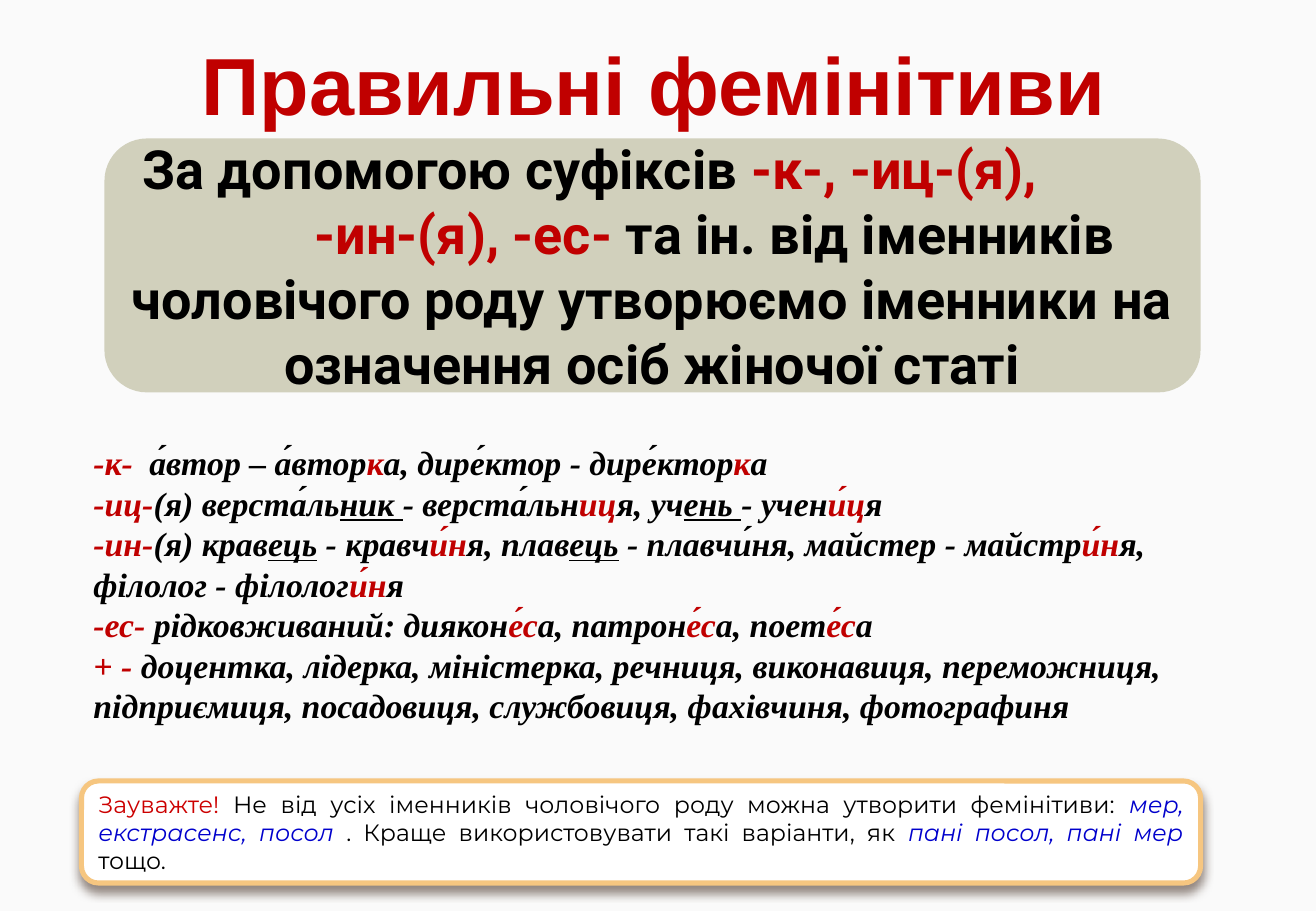
import pptx
import pptx.util
import pptx.dml.color
import pptx.enum.shapes
import pptx.enum.text
import pptx.oxml
import pptx.oxml.ns

RGBColor = pptx.dml.color.RGBColor
ALIGN = pptx.enum.text.PP_ALIGN
ANCHOR = pptx.enum.text.MSO_ANCHOR
PAPER = RGBColor(0xFA, 0xFA, 0xFA)
WHITE = RGBColor(0xFF, 0xFF, 0xFF)
BLACK = RGBColor(0x00, 0x00, 0x00)
CRIMSON = RGBColor(0xC0, 0x00, 0x00)
SCARLET = RGBColor(0xCC, 0x00, 0x00)
BLUE = RGBColor(0x00, 0x00, 0xCC)
OLIVE = RGBColor(0xD1, 0xD0, 0xBC)
APRICOT = RGBColor(0xF6, 0xC6, 0x80)
BROWN = RGBColor(0x4E, 0x3B, 0x30)

SLIDE_WIDTH = pptx.util.Inches(10.83)
SLIDE_HEIGHT = pptx.util.Inches(7.5)

HEADING_FONT = {"name": "Arial", "size": pptx.util.Pt(48), "bold": True}
RULE_FONT = {"name": "Roboto", "size": pptx.util.Pt(32), "bold": True}
EXAMPLE_FONT = {"name": "Times New Roman", "size": pptx.util.Pt(20), "bold": True, "italic": True}
NOTE_FONT = {"name": "Montserrat", "size": pptx.util.Pt(14)}

PLAIN = {"color": BLACK}
SUFFIX = {"color": CRIMSON}
DROPPED = {"color": BLACK, "underline": True}
WARNING = {"color": SCARLET}
SAMPLE = {"color": BLUE, "italic": True}

RULE = [
    (ALIGN.LEFT, 0.11, [("За допомогою суфіксів ", PLAIN), ("-к-, -иц-(я),", SUFFIX)]),
    (ALIGN.LEFT, 1.53, [("-ин-(я), -ес- ", SUFFIX), ("та ін. від іменників", PLAIN)]),
    (ALIGN.CENTER, 0, [("чоловічого роду утворюємо іменники на означення осіб жіночої статі", PLAIN)]),
]
EXAMPLES = [
    [("-к-\t", SUFFIX), ("а́втор – а́втор", PLAIN), ("к", SUFFIX),
     ("а, дире́ктор - дире́ктор", PLAIN), ("к", SUFFIX), ("а", PLAIN)],
    [("-иц-", SUFFIX), ("(я) верста́ль", PLAIN), ("ник ", DROPPED), ("- верста́льн", PLAIN),
     ("иц", SUFFIX), ("я, уч", PLAIN), ("ень ", DROPPED), ("- учен", PLAIN),
     ("и́ц", SUFFIX), ("я", PLAIN)],
    [("-ин-", SUFFIX), ("(я) крав", PLAIN), ("ець", DROPPED), (" - кравч", PLAIN),
     ("и́н", SUFFIX), ("я, плав", PLAIN), ("ець", DROPPED),
     (" - плавчи́ня, майстер - майстр", PLAIN), ("и́н", SUFFIX),
     ("я, філолог - філолог", PLAIN), ("и́н", SUFFIX), ("я", PLAIN)],
    [("-ес- ", SUFFIX), ("рідковживаний: диякон", PLAIN), ("е́с", SUFFIX), ("а, патрон", PLAIN),
     ("е́с", SUFFIX), ("а, поет", PLAIN), ("е́с", SUFFIX), ("а", PLAIN)],
    [("+ - ", SUFFIX),
     ("доцентка, лідерка, міністерка, речниця, виконавиця, переможниця, "
      "підприємиця, посадовиця, службовиця, фахівчиня, фотографиня", PLAIN)],
]
NOTE = [
    ("Зауважте! ", WARNING),
    ("Не від усіх іменників чоловічого роду можна утворити фемінітиви: ", PLAIN),
    ("мер, екстрасенс, посол ", SAMPLE),
    (". Краще використовувати такі варіанти, як ", PLAIN),
    ("пані посол, пані мер ", SAMPLE),
    ("тощо.", PLAIN),
]


def percent_box(left, top, width, height):
    """Turn percentages of the slide into left, top, width and height."""
    return tuple(int(share * side / 100) for share, side in
                 ((left, SLIDE_WIDTH), (top, SLIDE_HEIGHT), (width, SLIDE_WIDTH), (height, SLIDE_HEIGHT)))


def write_runs(paragraph, runs, base_font):
    """Add runs that combine a base font with their own style."""
    for text, style in runs:
        run = paragraph.add_run()
        run.text = text
        for key, value in {**base_font, **style}.items():
            if key == "color":
                run.font.color.rgb = value
            else:
                setattr(run.font, key, value)


def next_paragraph(frame, index):
    """Return the first paragraph of a frame or add another one."""
    return frame.add_paragraph() if index else frame.paragraphs[0]


def add_panel(slide, box, fill):
    """Draw a rounded panel with vertically centred text."""
    panel = slide.shapes.add_shape(pptx.enum.shapes.MSO_SHAPE.ROUNDED_RECTANGLE, *box)
    panel.shadow.inherit = False
    panel.fill.solid()
    panel.fill.fore_color.rgb = fill
    panel.line.fill.background()
    panel.text_frame.word_wrap = True
    panel.text_frame.vertical_anchor = ANCHOR.MIDDLE
    return panel


def add_heading(slide, box):
    """Move the title into its box and write it."""
    heading = slide.shapes.title
    heading.left, heading.top, heading.width, heading.height = box
    frame = heading.text_frame
    for key, value in {"word_wrap": True, "vertical_anchor": ANCHOR.TOP,
                       "auto_size": pptx.enum.text.MSO_AUTO_SIZE.NONE}.items():
        setattr(frame, key, value)
    frame.paragraphs[0].alignment = ALIGN.LEFT
    write_runs(frame.paragraphs[0], [("Правильні фемінітиви", SUFFIX)], HEADING_FONT)


def add_rule(slide, box):
    """Write the rule on an olive panel."""
    frame = add_panel(slide, box, OLIVE).text_frame
    for index, (alignment, indent, runs) in enumerate(RULE):
        paragraph = next_paragraph(frame, index)
        paragraph.alignment = alignment
        paragraph._p.get_or_add_pPr().set("marL", str(pptx.util.Inches(indent)))
        write_runs(paragraph, runs, RULE_FONT)


def add_examples(slide, box):
    """List the examples for each suffix."""
    frame = slide.shapes.add_textbox(*box).text_frame
    frame.word_wrap = True
    for index, runs in enumerate(EXAMPLES):
        paragraph = next_paragraph(frame, index)
        if "\t" in runs[0][0]:
            paragraph._p.get_or_add_pPr().append(pptx.oxml.parse_xml(
                f'<a:tabLst {pptx.oxml.ns.nsdecls("a")}>'
                f'<a:tab pos="{pptx.util.Inches(0.46)}" algn="l"/></a:tabLst>'))
        write_runs(paragraph, runs, EXAMPLE_FONT)


def add_note(slide, box):
    """Write the warning in a framed panel with a soft shadow."""
    panel = add_panel(slide, box, WHITE)
    panel.line.color.rgb = APRICOT
    panel.line.width = pptx.util.Pt(3)
    effects = panel._element.spPr.find(pptx.oxml.ns.qn("a:effectLst"))
    effects.append(pptx.oxml.parse_xml(
        f'<a:outerShdw {pptx.oxml.ns.nsdecls("a")} blurRad="{pptx.util.Pt(6)}" '
        f'dist="{pptx.util.Pt(4)}" dir="5400000" rotWithShape="0">'
        f'<a:srgbClr val="{BROWN}"><a:alpha val="60000"/></a:srgbClr></a:outerShdw>'))
    paragraph = panel.text_frame.paragraphs[0]
    paragraph.alignment = ALIGN.JUSTIFY
    write_runs(paragraph, NOTE, NOTE_FONT)


def main():
    """Build the slide and save it."""
    deck = pptx.Presentation()
    deck.slide_width, deck.slide_height = SLIDE_WIDTH, SLIDE_HEIGHT
    slide = deck.slides.add_slide(deck.slide_layouts[5])
    slide.background.fill.solid()
    slide.background.fill.fore_color.rgb = PAPER
    add_examples(slide, percent_box(6.19, 47.87, 86.52, 33.73))
    add_rule(slide, percent_box(7.94, 15.2, 83.29, 27.87))
    add_heading(slide, percent_box(14.4, 3.07, 73.04, 12.13))
    add_note(slide, percent_box(6.19, 85.73, 85.04, 11.2))
    deck.save("out.pptx")


if __name__ == "__main__":
    main()
